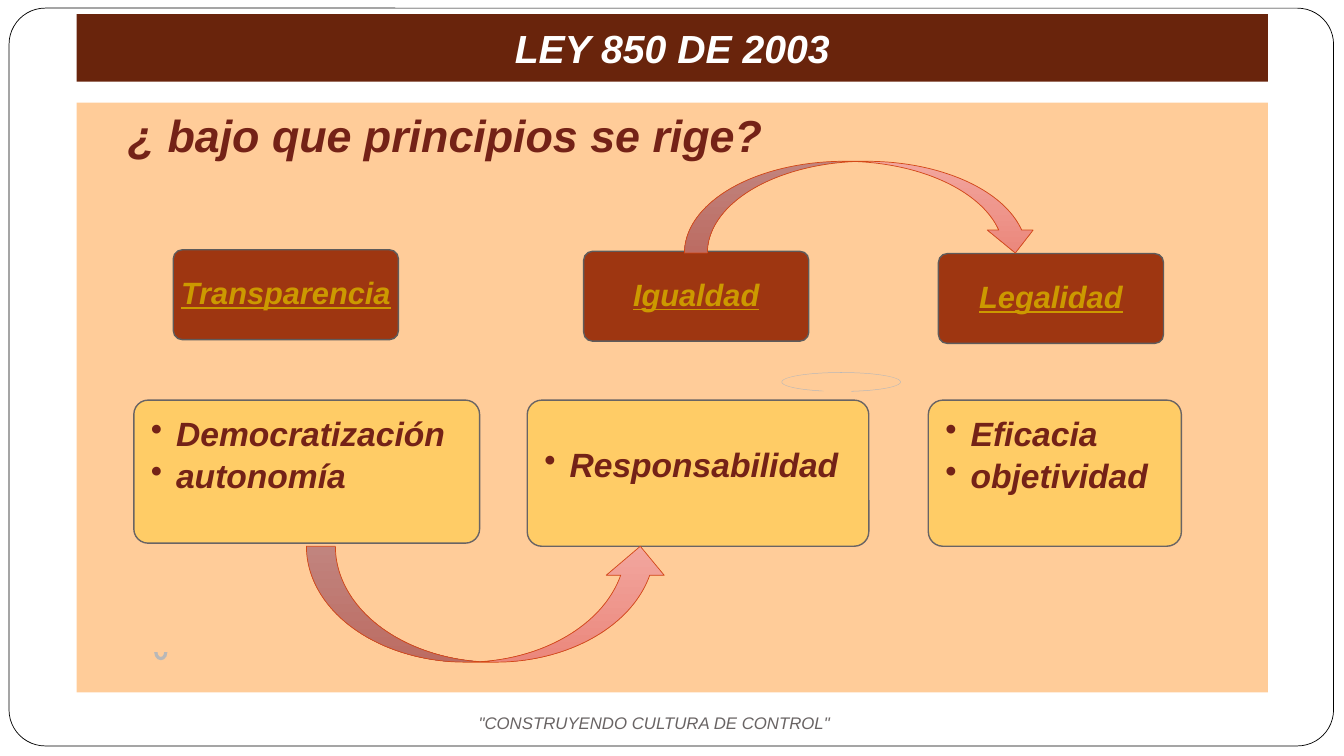
"""Build the slide on the principles of Ley 850 de 2003."""
from lxml.etree import SubElement
from pptx import Presentation
from pptx.dml.color import RGBColor
from pptx.enum.shapes import MSO_SHAPE as Shape
from pptx.enum.text import MSO_ANCHOR as Anchor, PP_ALIGN as Align
from pptx.oxml.ns import qn
from pptx.util import Pt

TITLE = "LEY 850 DE 2003"
QUESTION = "¿ bajo que principios se rige?"
MOTTO = "\"CONSTRUYENDO CULTURA DE CONTROL\""
PRINCIPLES = [
    {"label": "Transparencia", "label_at": (123.8, 178.4), "card": (95.6, 247, 102.2),
     "items": ["Democratización", "autonomía"], "drop": 0},
    {"label": "Igualdad", "label_at": (416.9, 179.5), "card": (376.6, 244, 104.4),
     "items": ["Responsabilidad"], "drop": 22.5},
    {"label": "Legalidad", "label_at": (670.3, 181.1), "card": (663.1, 180.8, 104.4),
     "items": ["Eficacia", "objetividad"], "drop": 0},
]
CURVES = [
    (Shape.CURVED_UP_ARROW, (218.9, 390.2, 259.2, 82.8)),
    (Shape.CURVED_DOWN_ARROW, (488.9, 115.2, 252.7, 65.5)),
]
LABEL_SIZE = (160.8, 64.2)
CARD_TOP = 285.8
BULLET_INDENT = 18


def color(hex_code):
    return RGBColor.from_string(hex_code)


def add_block(kind, box, fill=None, line=None, width=1):
    block = slide.shapes.add_shape(kind, *map(Pt, box))
    block.shadow.inherit = False
    if fill:
        block.fill.solid()
        block.fill.fore_color.rgb = color(fill)
    if line:
        block.line.color.rgb = color(line)
        block.line.width = Pt(width)
    else:
        block.line.fill.background()
    return block


def write(block, lines, size, ink, anchor=Anchor.TOP, align=Align.LEFT,
          insets=(7.2, 3.6, 7.2, 3.6), bold=True, underline=False):
    frame = block.text_frame
    frame.word_wrap = True
    frame.vertical_anchor = anchor
    (frame.margin_left, frame.margin_top,
     frame.margin_right, frame.margin_bottom) = map(Pt, insets)
    for index, line in enumerate(lines):
        paragraph = frame.add_paragraph() if index else frame.paragraphs[0]
        paragraph.alignment = align
        run = paragraph.add_run()
        run.text = line
        font = run.font
        font.name, font.size = "Arial", Pt(size)
        font.bold, font.italic, font.underline = bold, True, underline
        font.color.rgb = color(ink)
    return frame.paragraphs


def indent(paragraph, left, first=0):
    properties = paragraph._p.get_or_add_pPr()
    properties.set("marL", str(Pt(left)))
    properties.set("indent", str(Pt(first)))
    return properties


def add_card(left, width, height, items, drop):
    card = add_block(Shape.ROUNDED_RECTANGLE, (left, CARD_TOP, width, height),
                     "FFCC66", "696464")
    card.adjustments[0] = 0.1
    for paragraph in write(card, items, 24, "742217", insets=(9.2, 9.2 + drop, 9.2, 9.2)):
        paragraph.line_spacing = 0.9
        paragraph.space_after = Pt(4.2)
        SubElement(indent(paragraph, BULLET_INDENT, -BULLET_INDENT),
                   qn("a:buChar")).set("char", "•")


def add_label(text, at):
    label = add_block(Shape.ROUNDED_RECTANGLE, at + LABEL_SIZE, "9E3611", "5F5B5B")
    label.adjustments[0] = 0.1
    write(label, [text], 22, "CC9900", Anchor.MIDDLE, Align.CENTER,
          (3.6, 2, 3.6, 2), underline=True)[0].line_spacing = 0.9


def add_curve(kind, box):
    curve = add_block(kind, box, line="D34817", width=0.5)
    curve.fill.gradient()
    curve.fill.gradient_angle = 270
    for stop, shade in zip(curve.fill.gradient_stops, ("F2A69E", "EB877C")):
        stop.color.rgb = color(shade)


deck = Presentation()
deck.slide_width, deck.slide_height = Pt(960), Pt(540)
slide = deck.slides.add_slide(deck.slide_layouts[6])

border = add_block(Shape.ROUNDED_RECTANGLE, (6.5, 5.8, 946.1, 527), "FFFFFF", "000000", 0.5)
border.adjustments[0] = 0.049
banner = add_block(Shape.RECTANGLE, (54.7, 10.1, 851, 48.2), "69240C")
write(banner, [TITLE], 28, "FFFFFF", Anchor.BOTTOM, Align.CENTER, (7.2, 3.6, 7.2, 7.2))
panel = add_block(Shape.RECTANGLE, (54.7, 73.4, 851, 421.2), "FFCC99")
question = write(panel, [QUESTION], 32, "742217", align=Align.JUSTIFY)[0]
question.space_before = Pt(5.8)
indent(question, 29.5)

small_arc = add_block(Shape.BLOCK_ARC, (110.2, 460.1, 9.4, 11.5), "B9B8B8")
small_arc.rotation = 180
loop = add_block(Shape.LEFT_CIRCULAR_ARROW, (558, 265.7, 85.7, 14.4), "B9B8B8")
for index, value in enumerate((0.026, 3.132, 202.551, 133.193, 0.03)):
    loop.adjustments[index] = value
for shape, flips in ((small_arc, ["flipH"]), (loop, ["flipH", "flipV"])):
    for flip in flips:
        shape._element.spPr.xfrm.set(flip, "1")

for principle in PRINCIPLES:
    add_card(*principle["card"], principle["items"], principle["drop"])
    add_label(principle["label"], principle["label_at"])
for kind, box in CURVES:
    add_curve(kind, box)

footer = slide.shapes.add_textbox(*map(Pt, (334.8, 503.3, 287.3, 26.6)))
write(footer, [MOTTO], 12, "696464", Anchor.MIDDLE, bold=False)

deck.save("out.pptx")
